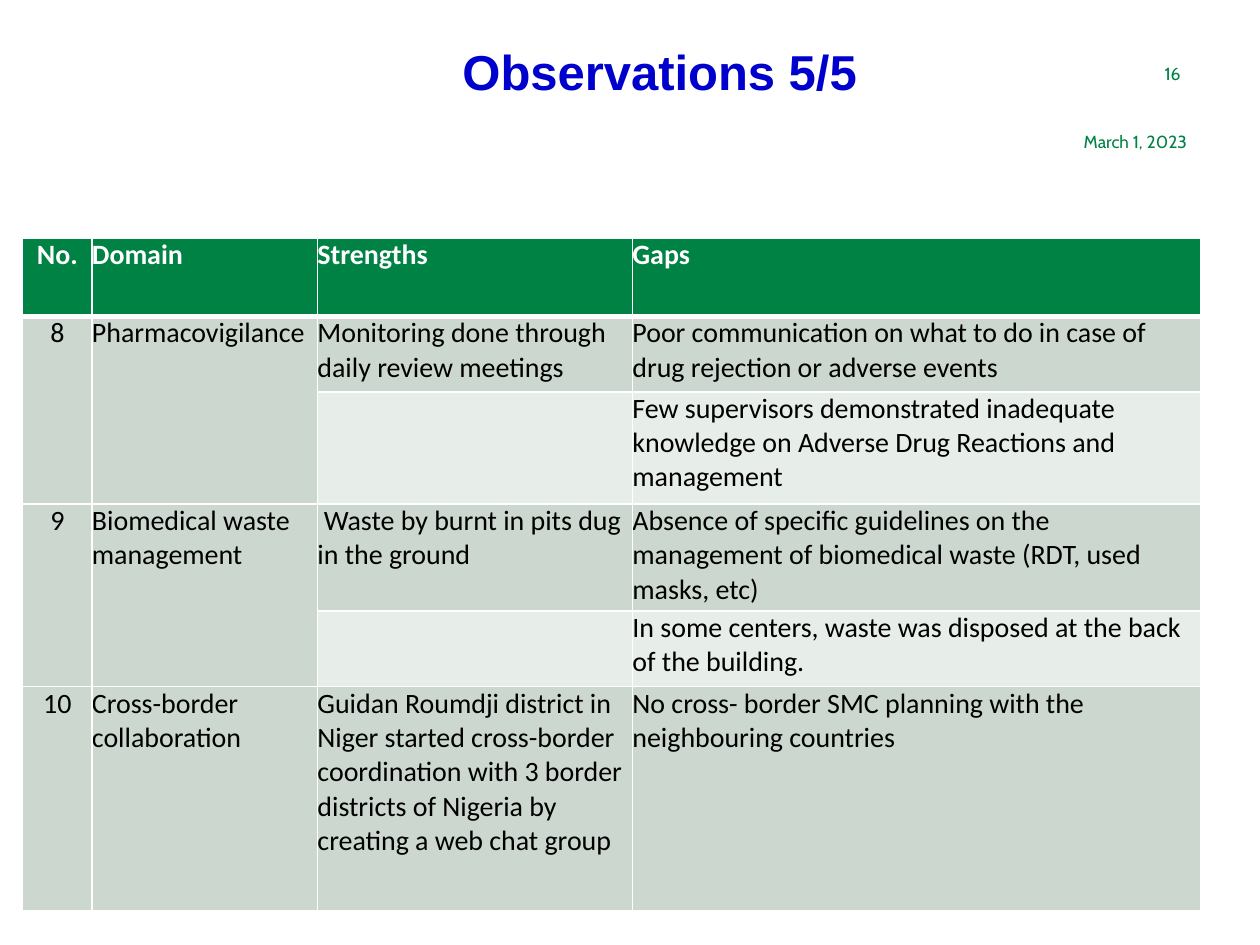
from dataclasses import dataclass

import pptx
import pptx.dml.color
import pptx.enum.text
import pptx.oxml
import pptx.oxml.ns
import pptx.util

Inches = pptx.util.Inches
Pt = pptx.util.Pt
ALIGN = pptx.enum.text.PP_ALIGN
ANCHOR = pptx.enum.text.MSO_ANCHOR

COLORS = {
    "title": "0000CC",
    "green": "008244",
    "band_dark": "CCD8CF",
    "band_light": "E7EDE9",
    "white": "FFFFFF",
    "black": "000000",
}


@dataclass
class Label:
    text: str
    left: float
    top: float


@dataclass
class Row:
    height: float
    texts: tuple[str, ...]
    fill: str = "band_dark"


LABELS = [Label("16", 5.86, 0.5), Label("March 1, 2023", 5.91, 1.04)]
COLUMNS = [0.55, 1.79, 2.5, 4.51]
ROWS = [
    Row(0.62, ("No.", "Domain", "Strengths", "Gaps"), "green"),
    Row(0.6, ("8", "Pharmacovigilance",
              "Monitoring done through daily review meetings",
              "Poor communication on what to do in case of drug rejection or adverse events")),
    Row(0.89, ("", "", "",
               "Few supervisors demonstrated inadequate knowledge on Adverse Drug "
               "Reactions and management"), "band_light"),
    Row(0.85, ("9", "Biomedical waste management",
               "Waste by burnt in pits dug in the ground",
               "Absence of specific guidelines on the management of biomedical waste "
               "(RDT, used masks, etc)")),
    Row(0.6, ("", "", "",
              "In some centers, waste was disposed at the back of the building."), "band_light"),
    Row(1.78, ("10", "Cross-border collaboration",
               "Guidan Roumdji district in Niger started cross-border coordination with "
               "3 border districts of Nigeria by creating a web chat group",
               "No cross- border SMC planning with the neighbouring countries")),
]
MERGED_ROWS = [1, 3]
INDENTED_CELL = (3, 2)


def set_text(tf, text: str, *, size: float, color: str, font: str = "Calibri",
             bold: bool = False, align=ALIGN.LEFT, spacing: float = 1.0,
             margin: float = 0, indent: float = 0) -> None:
    tf.word_wrap = True
    tf.vertical_anchor = ANCHOR.TOP
    tf.margin_left = tf.margin_right = Inches(2 * margin)
    tf.margin_top = tf.margin_bottom = Inches(margin)
    p = tf.paragraphs[0]
    p.alignment = align
    p.line_spacing = spacing
    p.space_before = Pt(0)
    if indent:
        p._p.get_or_add_pPr().set("indent", str(Inches(indent)))
    r = p.add_run()
    r.text = text
    r.font.name = font
    r.font.size = Pt(size)
    r.font.bold = bold
    r.font.color.rgb = pptx.dml.color.RGBColor.from_string(COLORS[color])


def add_title(slide, text: str) -> None:
    sp = slide.shapes.title
    sp.left, sp.top = Inches(1.54), Inches(0.33)
    sp.width, sp.height = Inches(7.39), Inches(0.88)
    set_text(sp.text_frame, text, size=28, color="title", font="Arial",
             bold=True, align=ALIGN.CENTER, spacing=0.9, margin=0.05)


def add_label(slide, label: Label) -> None:
    sp = slide.shapes.add_textbox(Inches(label.left), Inches(label.top),
                                  Inches(3.51), Inches(0.17))
    set_text(sp.text_frame, label.text, size=10, color="green", font="Cabin",
             align=ALIGN.RIGHT)


def set_borders(cell, widths: dict[str, float]) -> None:
    tc_pr = cell._tc.get_or_add_tcPr()
    for side, width in widths.items():
        tc_pr.append(pptx.oxml.parse_xml(
            f'<a:ln{side} {pptx.oxml.ns.nsdecls("a")} w="{Pt(width)}">'
            f'<a:solidFill><a:srgbClr val="{COLORS["white"]}"/></a:solidFill>'
            f'</a:ln{side}>'))


def format_cell(cell, row: int, col: int) -> None:
    header = row == 0
    set_borders(cell, {"L": 1, "R": 1, "T": 3 if row == 1 else 1, "B": 3 if header else 1})
    cell.fill.solid()
    cell.fill.fore_color.rgb = pptx.dml.color.RGBColor.from_string(COLORS[ROWS[row].fill])
    cell.margin_left = cell.margin_right = cell.margin_top = cell.margin_bottom = 0
    text = ROWS[row].texts[col]
    if text:
        set_text(cell.text_frame, text, size=16, color="white" if header else "black",
                 bold=header, align=ALIGN.CENTER if col == 0 else ALIGN.LEFT,
                 indent=0.05 if (row, col) == INDENTED_CELL else 0)


def add_observations(slide) -> None:
    frame = slide.shapes.add_table(
        len(ROWS), len(COLUMNS), Inches(0.18), Inches(1.89),
        Inches(sum(COLUMNS)), Inches(sum(row.height for row in ROWS)))
    table = frame.table
    for column, width in zip(table.columns, COLUMNS):
        column.width = Inches(width)
    for i, row in enumerate(ROWS):
        table.rows[i].height = Inches(row.height)
        for j in range(len(COLUMNS)):
            format_cell(table.cell(i, j), i, j)
    for i in MERGED_ROWS:
        for j in range(2):
            table.cell(i, j).merge(table.cell(i + 1, j))


def main() -> None:
    prs = pptx.Presentation()
    prs.slide_width, prs.slide_height = Inches(10), Inches(7.5)
    slide = prs.slides.add_slide(prs.slide_layouts[5])
    for label in LABELS:
        add_label(slide, label)
    add_title(slide, "Observations 5/5")
    add_observations(slide)
    prs.save("out.pptx")


if __name__ == "__main__":
    main()
